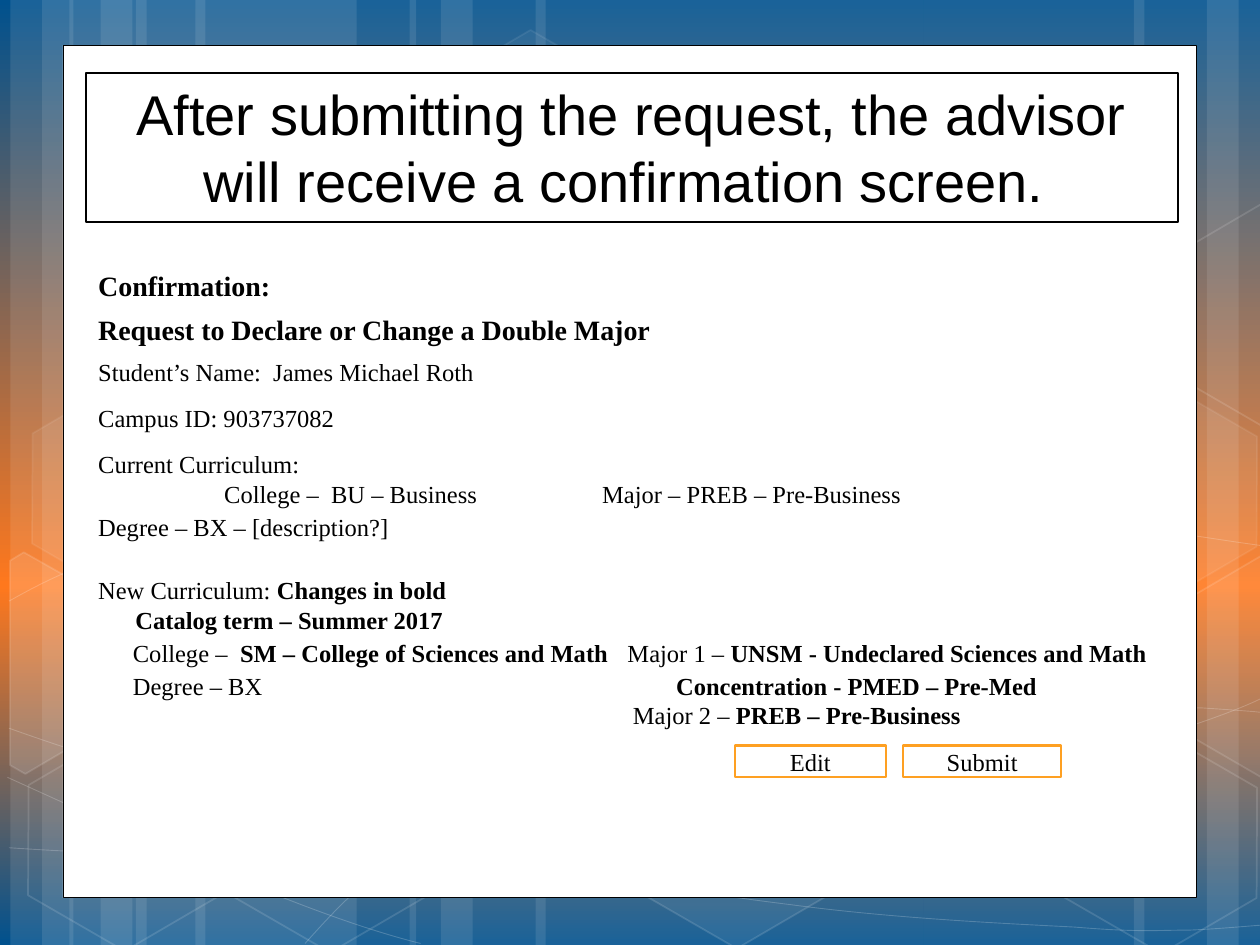
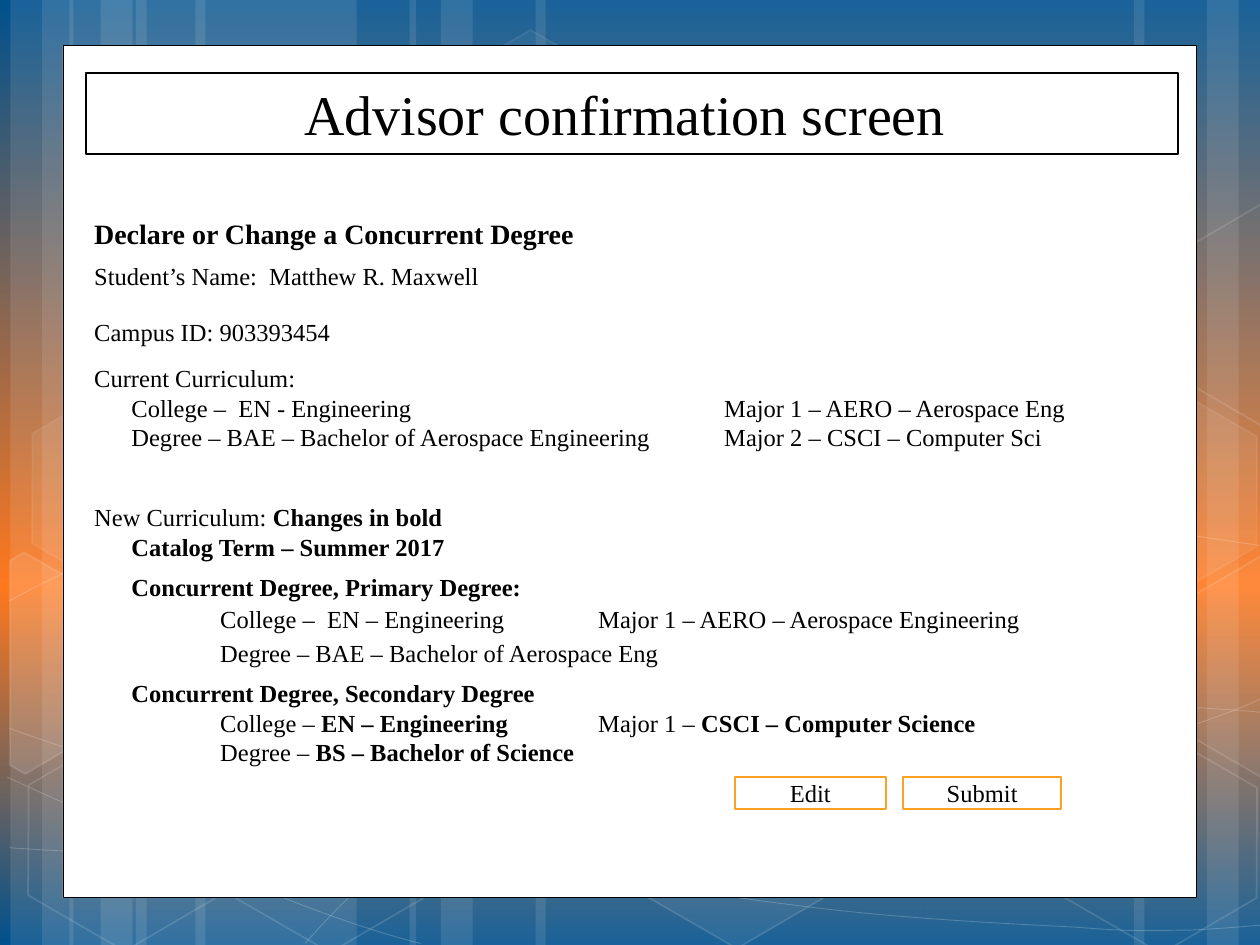
"""Build two advisor confirmation slides on a shared striped backdrop."""
import math
from lxml import etree
from pptx import Presentation
from pptx import util as u
from pptx.dml.color import RGBColor
from pptx.enum import shapes, text
from pptx.oxml.ns import qn

WHITE = RGBColor(0xFF, 0xFF, 0xFF)
BLACK = RGBColor(0x00, 0x00, 0x00)
AMBER = RGBColor(0xFE, 0xA0, 0x22)
BLUE = RGBColor(0x00, 0x51, 0x8E)
ORANGE = RGBColor(0xFF, 0x78, 0x1D)

WIDTH, HEIGHT = 25.4, 19.05
SERIF, SANS = "Times New Roman", "Arial"
HEAD, BODY = 16, 14
LEADING = 1.2
TILT = 30

INDENT = (0.75,)
WIDE = (2.54, 10.16)
PAIRED = (0.75, 12.7)

SLIDES = [
    {
        "title": "After submitting the request, the advisor will receive a confirmation screen. ",
        "title_font": SANS, "title_height": 3.0,
        "body": (1.73, 5.28, 21.79, 12.75), "buttons_top": 15.03,
        "rows": [
            (0, HEAD, (), "*Confirmation:"),
            (6, HEAD, (), "*Request to Declare or Change a Double Major"),
            (6.5, BODY, (), "Student’s Name:  James Michael Roth"),
            (9.5, BODY, (), "Campus ID: 903737082"),
            (9.5, BODY, (), "Current Curriculum:"),
            (0, BODY, WIDE, "\tCollege –  BU – Business\tMajor – PREB – Pre-Business"),
            (2.5, BODY, (), "Degree – BX – [description?]"),
            (19.2, BODY, (), "New Curriculum: *Changes in bold"),
            (0, BODY, INDENT, "\t*Catalog term – Summer 2017"),
            (2, BODY, (0.7, 10.67), "\tCollege –  *SM – College of Sciences and Math\t"
                                    "*Major 1 – *UNSM - Undeclared Sciences and Math"),
            (2, BODY, (0.7, 11.65), "\tDegree – BX\t*Concentration - PMED – Pre-Med"),
            (0.2, BODY, (10.78,), "\tMajor 2 – *PREB – Pre-Business"),
        ],
    },
    {
        "title": "Advisor confirmation screen ",
        "title_font": SERIF, "title_height": 1.63,
        "body": (1.65, 4.24, 21.79, 14.35), "buttons_top": 15.67,
        "rows": [
            (0, HEAD, (), "*Declare or Change a Concurrent Degree"),
            (6, BODY, (), "Student’s Name:  Matthew R. Maxwell"),
            (15.6, BODY, (), "Campus ID: 903393454"),
            (9.5, BODY, (), "Current Curriculum:"),
            (0, BODY, PAIRED, "\tCollege –  EN - Engineering\tMajor 1 – AERO – Aerospace Eng"),
            (0, BODY, PAIRED, "\tDegree – BAE – Bachelor of Aerospace Engineering"
                              "\tMajor 2 – CSCI – Computer Sci"),
            (28.9, BODY, (), "New Curriculum: *Changes in bold"),
            (0, BODY, INDENT, "\t*Catalog Term – Summer 2017"),
            (6, BODY, INDENT, "\t*Concurrent Degree, Primary Degree:"),
            (2, BODY, WIDE, "\tCollege –  EN – Engineering\tMajor 1 – AERO – Aerospace Engineering"),
            (2.5, BODY, WIDE, "\tDegree – BAE – Bachelor of Aerospace Eng"),
            (6, BODY, INDENT, "\t*Concurrent Degree, Secondary Degree"),
            (0, BODY, WIDE, "\tCollege – *EN – Engineering\t*Major 1 – *CSCI – Computer Science"),
            (0, BODY, WIDE, "\tDegree – *BS – Bachelor of Science"),
        ],
    },
]

BUTTONS = [("Submit", 18.21, 3.18), ("Edit", 14.81, 3.05)]

BACKDROP_STOPS = [(0, BLUE), (62, ORANGE), (100, BLUE)]

STRIPES = [
    (2.74, 4.45), (0.21, 1.27), (0.85, 2.11), (3.94, 4.45), (1.4, 1.27), (2.03, 2.11),
    (18.62, 4.45), (24.33, 1.27), (22.86, 2.11), (10.8, 7.82), (8.26, 1.27), (8.89, 2.11),
]

CURVES = [
    [(0.18, 17.09), (1.37, 17.17), (2.92, 17.25), (4.83, 17.22), (6.73, 17.2), (9.09, 17.15),
     (11.63, 16.89), (14.17, 16.64), (17.78, 16.15), (20.12, 15.67), (22.43, 15.19),
     (24.82, 14.43), (25.58, 14)],
    [(0.18, 12.12), (0.91, 11.71), (1.65, 11.33), (3.07, 10.95), (4.52, 10.57), (6.58, 10.01),
     (8.81, 9.83), (11.07, 9.65), (13.82, 9.63), (16.61, 9.83), (19.41, 10.03),
     (24.05, 10.82), (25.58, 11.02)],
    [(0.15, 15.67), (3.23, 17.07), (6.27, 18.47), (8.48, 19.02)],
    [(0.18, 14.68), (0.97, 14.96), (1.78, 15.24), (3.25, 15.65), (4.72, 16.03), (6.93, 16.66),
     (9.07, 17.09), (11.18, 17.53), (13.84, 17.98), (15.95, 18.24), (18.06, 18.52),
     (20.32, 18.62), (21.67, 18.69), (22.99, 18.8), (23.34, 18.75), (24, 18.75),
     (24.66, 18.72), (25.12, 18.67), (25.58, 18.64)],
    [(6.15, 19.02), (6.6, 18.52), (7.06, 18.01), (7.67, 17.55), (8.28, 17.09), (9.14, 16.59),
     (9.86, 16.23), (10.57, 15.88), (11, 15.72), (11.94, 15.47), (12.85, 15.21),
     (14.55, 14.86), (15.44, 14.68), (16.36, 14.5), (16.48, 14.5), (17.27, 14.45),
     (18.06, 14.38), (19.3, 14.3), (20.17, 14.27), (21.06, 14.25), (22.5, 14.27),
     (22.5, 14.27), (23, 14.27), (23.6, 14.27), (24.21, 14.27), (24.66, 14.3),
     (25.1, 14.33), (25.32, 14.35), (25.55, 14.38), (25.48, 14.35), (25.55, 14.38)],
]

HEXAGONS = [
    (8.48, 0.91, 4, 8), (12.62, 14.96, 6, 12), (0.28, 15.01, 0, 12), (0.36, 7.92, 7, 8),
    (4.42, 15.04, 0, 12), (19.13, 11.51, 10, 12), (21.18, 15.06, 0, 12), (21.18, 7.98, 7, 8),
]

LEFT_CUT = [(0.2, 11.3), (0.48, 11.13), (2.44, 12.24), (2.41, 14.48), (0.51, 15.6), (0.2, 15.42)]
RIGHT_CUT = [(23.52, 12.32), (25.43, 11.2), (25.63, 11.33), (25.63, 15.57), (25.45, 15.67),
             (23.52, 14.55)]
CUT_RISE = 7.09
CUT_HEXAGONS = [
    (LEFT_CUT, (0.91, 13.59), 10),
    (RIGHT_CUT, (25.02, 13.21), 4),
    ([(x, y - CUT_RISE) for x, y in RIGHT_CUT], (25.02, 13.21 - CUT_RISE), 0),
]


def set_alpha(color_format, percent):
    """Make a solid colour partly transparent."""
    color = color_format._xFill.find(qn("a:srgbClr"))
    etree.SubElement(color, qn("a:alpha"), val=str(percent * 1000))


def paint(sp, fill=None, line=None, width=1, fill_alpha=100, line_alpha=100):
    """Give a shape its fill and outline and remove its shadow."""
    sp.shadow.inherit = False
    if fill is None or not fill_alpha:
        sp.fill.background()
    else:
        sp.fill.solid()
        sp.fill.fore_color.rgb = fill
        if fill_alpha < 100:
            set_alpha(sp.fill.fore_color, fill_alpha)
    if line is None:
        sp.line.fill.background()
    else:
        sp.line.color.rgb = line
        sp.line.width = u.Pt(width)
        if line_alpha < 100:
            set_alpha(sp.line.color, line_alpha)
    return sp


def add_preset(s, kind, *box):
    """Add a preset shape at a box given in centimetres."""
    return s.shapes.add_shape(kind, *(u.Cm(v) for v in box))


def add_rect(s, *box, **look):
    """Add a painted rectangle."""
    return paint(add_preset(s, shapes.MSO_SHAPE.RECTANGLE, *box), **look)


def add_outline(s, points, close, **look):
    """Add a painted freeform through the given points."""
    emu = [(u.Cm(x), u.Cm(y)) for x, y in points]
    builder = s.shapes.build_freeform(*emu[0])
    builder.add_line_segments(emu[1:], close=close)
    return paint(builder.convert_to_shape(), **look)


def add_curve(s, controls, **look):
    """Add a freeform of chained cubic Bezier segments."""
    sp = add_outline(s, controls, False, **look)
    steps = list(sp._element.iter(qn("a:lnTo")))
    for i in range(0, len(steps), 3):
        bezier = etree.Element(qn("a:cubicBezTo"))
        steps[i].addprevious(bezier)
        for step in steps[i:i + 3]:
            bezier.append(step[0])
            step.getparent().remove(step)


def untilt(points, center):
    """Turn points back by the tilt around a centre."""
    cos, sin = math.cos(math.radians(TILT)), math.sin(math.radians(TILT))
    cx, cy = center
    return [(cx + cos * (x - cx) + sin * (y - cy), cy - sin * (x - cx) + cos * (y - cy))
            for x, y in points]


def write_row(p, content, size, font=SERIF, before=0, tabs=(), align=text.PP_ALIGN.LEFT):
    """Write one paragraph; each asterisk switches bold on or off."""
    layout = {"alignment": align, "line_spacing": u.Pt(round(size * LEADING, 2)),
              "space_before": u.Pt(before), "space_after": u.Pt(0)}
    for name, value in layout.items():
        setattr(p, name, value)
    if tabs:
        tab_list = etree.SubElement(p._p.get_or_add_pPr(), qn("a:tabLst"))
        for pos in tabs:
            etree.SubElement(tab_list, qn("a:tab"), pos=str(u.Cm(pos)), algn="l")
    for i, part in enumerate(content.split("*")):
        if part:
            r = p.add_run()
            r.text = part
            r.font.color.rgb = BLACK
            for name, value in {"name": font, "size": u.Pt(size), "bold": i % 2 == 1}.items():
                setattr(r.font, name, value)


def add_label(s, label, size, font, line, anchor, *box):
    """Add a white outlined box with centred text."""
    sp = add_rect(s, *box, fill=WHITE, line=line, width=1.25)
    tf = sp.text_frame
    tf.word_wrap = True
    tf.vertical_anchor = anchor
    write_row(tf.paragraphs[0], label, size, font, align=text.PP_ALIGN.CENTER)


def add_backdrop(s):
    """Draw the gradient, stripes, curves, hexagons and white panel."""
    fill = s.background.fill
    fill.gradient()
    fill.gradient_angle = 270
    stops = s._element.find(".//" + qn("a:gsLst"))
    for stop in list(stops):
        stops.remove(stop)
    for pos, color in BACKDROP_STOPS:
        stop = etree.SubElement(stops, qn("a:gs"), pos=str(pos * 1000))
        etree.SubElement(stop, qn("a:srgbClr"), val=str(color))
    for left, width in STRIPES:
        add_rect(s, left, 0, width, HEIGHT, fill=WHITE, fill_alpha=10)
    for controls in CURVES:
        add_curve(s, controls, line=WHITE, width=0.5, line_alpha=20)
    for left, top, fill_alpha, line_alpha in HEXAGONS:
        sp = add_preset(s, shapes.MSO_SHAPE.HEXAGON, left, top, 4.45, 3.86)
        sp.adjustments[0] = 0.285
        sp.rotation = TILT
        paint(sp, WHITE, WHITE, 1, fill_alpha, line_alpha)
    for points, center, fill_alpha in CUT_HEXAGONS:
        sp = add_outline(s, untilt(points, center), True, fill=WHITE, line=WHITE,
                         fill_alpha=fill_alpha, line_alpha=12)
        sp.rotation = TILT
    add_rect(s, 1.27, 0.91, 22.86, 17.19, fill=WHITE, line=BLACK, width=0.5)


def add_body(s, box, rows):
    """Add the confirmation text."""
    tf = s.shapes.add_textbox(*(u.Cm(v) for v in box)).text_frame
    tf.word_wrap = True
    for i, (before, size, tabs, content) in enumerate(rows):
        p = tf.add_paragraph() if i else tf.paragraphs[0]
        write_row(p, content, size, before=before, tabs=tabs)


def main():
    """Build and save the slides."""
    prs = Presentation()
    prs.slide_width, prs.slide_height = u.Cm(WIDTH), u.Cm(HEIGHT)
    for page in SLIDES:
        s = prs.slides.add_slide(prs.slide_layouts[6])
        add_backdrop(s)
        add_label(s, page["title"], 32, page["title_font"], BLACK, text.MSO_ANCHOR.TOP,
                  1.73, 1.48, 22.02, page["title_height"])
        add_body(s, page["body"], page["rows"])
        for label, left, width in BUTTONS:
            add_label(s, label, BODY, SERIF, AMBER, text.MSO_ANCHOR.MIDDLE,
                      left, page["buttons_top"], width, 0.64)
    prs.save("out.pptx")


if __name__ == "__main__":
    main()
